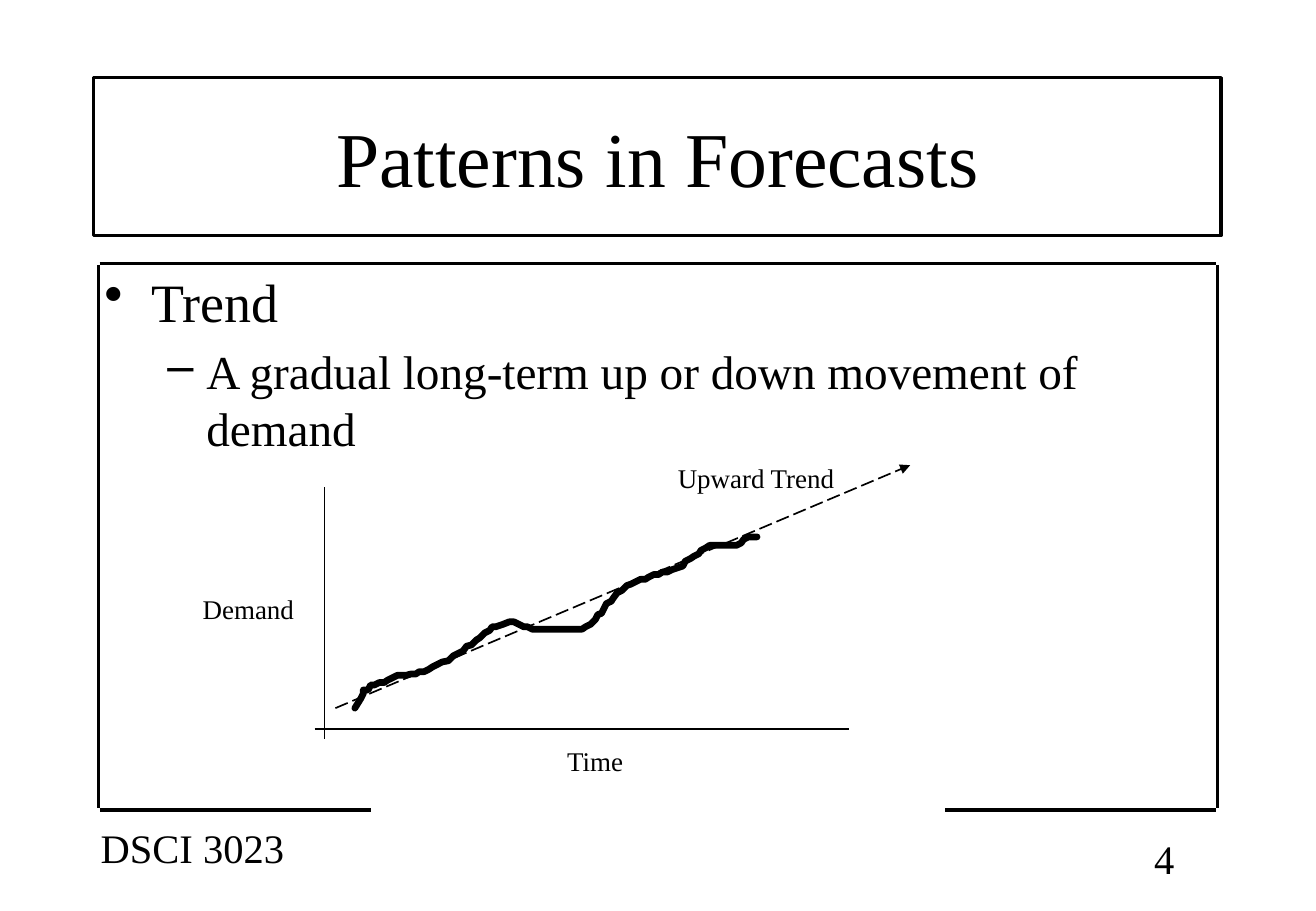
"""Build the slide on trend patterns in forecasts."""
from dataclasses import dataclass
from typing import Optional

from lxml.etree import SubElement
from pptx import Presentation
from pptx.dml.color import RGBColor
from pptx.enum.dml import MSO_LINE
from pptx.enum.shapes import MSO_CONNECTOR, MSO_SHAPE
from pptx.enum.text import MSO_ANCHOR, MSO_AUTO_SIZE, PP_ALIGN
from pptx.oxml.ns import qn
from pptx.util import Inches, Pt

COLUMNS, ROWS = 1083, 750
WIDTH, HEIGHT = Inches(10.83), Inches(7.5)
FONT = "Times New Roman"
BLACK = "000000"
LEFT, RIGHT, TOP, BOTTOM = 81, 1002, 217, 667


@dataclass(frozen=True)
class Rule:
    start: tuple[int, int]
    end: tuple[int, int]
    weight: float = 2
    dash: Optional[MSO_LINE] = None
    arrow: bool = False


@dataclass(frozen=True)
class Label:
    text: str
    area: tuple[int, int, int, int]
    size: int = 16


@dataclass(frozen=True)
class Bullet:
    text: str
    mark: str
    size: int
    margin: float
    hanging: float
    level: int = 0
    before: float = 0


RULES = [
    Rule((LEFT + 1, TOP), (RIGHT - 1, TOP)),
    Rule((LEFT, TOP + 1), (LEFT, BOTTOM - 2)),
    Rule((RIGHT, TOP + 1), (RIGHT, BOTTOM - 2)),
    Rule((LEFT + 1, BOTTOM), (305, BOTTOM)),
    Rule((778, BOTTOM), (RIGHT - 1, BOTTOM)),
    Rule((267, 401), (267, 608), 1),
    Rule((259, 600), (699, 600), 1),
    Rule((276, 583), (749, 383), 1, MSO_LINE.LONG_DASH, True),
]
LABELS = [
    Label("4", (940, 682, 59, 50), 24),
    Label("DSCI 3023", (73, 673, 171, 50), 24),
    Label("Demand", (157, 483, 95, 36)),
    Label("Time", (457, 608, 67, 36)),
    Label("Upward Trend", (548, 375, 150, 36)),
]
BULLETS = [
    Bullet("Trend", "•", 32, 0.39, 0.39),
    Bullet("A gradual long-term up or down movement of demand", "–", 28,
           0.84, 0.32, level=1, before=5.6),
]
DEMAND_CURVE = [
    (292, 583), (297, 575), (299, 571), (299, 568), (303, 568), (305, 564), (308, 564),
    (312, 562), (316, 562), (319, 560), (323, 558), (327, 556), (331, 556), (334, 556),
    (338, 555), (342, 555), (345, 553), (349, 553), (353, 551), (356, 549), (360, 547),
    (364, 545), (369, 544), (373, 540), (377, 538), (381, 536), (384, 532), (388, 531),
    (392, 527), (395, 525), (399, 521), (403, 519), (405, 516), (408, 516), (414, 514),
    (419, 512), (423, 512), (427, 514), (431, 516), (434, 516), (438, 518), (442, 518),
    (447, 518), (453, 518), (456, 518), (460, 518), (466, 518), (469, 518), (473, 518),
    (479, 518), (482, 516), (486, 514), (490, 510), (492, 506), (495, 505), (497, 501),
    (499, 497), (503, 495), (505, 492), (508, 488), (512, 486), (516, 482), (519, 481),
    (523, 479), (527, 477), (531, 477), (534, 475), (538, 473), (542, 473), (545, 471),
    (549, 471), (553, 469), (556, 468), (562, 466), (564, 462), (568, 460), (571, 458),
    (575, 456), (577, 453), (581, 451), (584, 449), (588, 449), (592, 449), (595, 449),
    (601, 449), (606, 449), (610, 447), (612, 444), (616, 442), (619, 442), (623, 442),
]


def color(value: str) -> RGBColor:
    return RGBColor.from_string(value)


def across(columns: float) -> int:
    return round(WIDTH * columns / COLUMNS)


def down(rows: float) -> int:
    return round(HEIGHT * rows / ROWS)


def place(left: float, top: float, width: float, height: float) -> tuple[int, int, int, int]:
    return across(left), down(top), across(width), down(height)


def write(para, text: str, *, size: float, fill: str = BLACK, align=PP_ALIGN.LEFT) -> None:
    para.alignment = align
    span = para.add_run()
    span.text = text
    span.font.name = FONT
    span.font.size = Pt(size)
    span.font.color.rgb = color(fill)


def stroke(line, weight: float) -> None:
    line.color.rgb = color(BLACK)
    line.width = Pt(weight)


def draw_rule(page, rule: Rule) -> None:
    (x1, y1), (x2, y2) = rule.start, rule.end
    connector = page.shapes.add_connector(
        MSO_CONNECTOR.STRAIGHT, across(x1), down(y1), across(x2), down(y2))
    stroke(connector.line, rule.weight)
    if rule.dash is not None:
        connector.line.dash_style = rule.dash
    properties = connector._element.spPr
    if rule.arrow:
        SubElement(properties.find(qn("a:ln")), qn("a:tailEnd"), type="triangle")
    SubElement(properties, qn("a:effectLst"))


def draw_label(page, label: Label) -> None:
    frame = page.shapes.add_textbox(*place(*label.area)).text_frame
    frame.word_wrap = False
    frame.auto_size = MSO_AUTO_SIZE.SHAPE_TO_FIT_TEXT
    write(frame.paragraphs[0], label.text, size=label.size)


def draw_title(page, text: str) -> None:
    box = page.shapes.add_shape(MSO_SHAPE.RECTANGLE, *place(77, 64, 928, 130))
    box.shadow.inherit = False
    box.fill.background()
    stroke(box.line, 2)
    box.text_frame.word_wrap = True
    box.text_frame.vertical_anchor = MSO_ANCHOR.MIDDLE
    write(box.text_frame.paragraphs[0], text, size=46, align=PP_ALIGN.CENTER)


def draw_bullets(page, bullets: list[Bullet]) -> None:
    frame = page.shapes.add_textbox(*place(76, 216, 931, 478)).text_frame
    frame.word_wrap = True
    for index, bullet in enumerate(bullets):
        para = frame.add_paragraph() if index else frame.paragraphs[0]
        para.level = bullet.level
        properties = para._p.get_or_add_pPr()
        properties.set("marL", str(Inches(bullet.margin)))
        properties.set("indent", str(-Inches(bullet.hanging)))
        SubElement(properties, qn("a:buChar"), char=bullet.mark)
        if bullet.before:
            para.space_before = Pt(bullet.before)
        write(para, bullet.text, size=bullet.size)


def draw_curve(page, points: list[tuple[int, int]]) -> None:
    builder = page.shapes.build_freeform(
        *points[0], scale=(WIDTH / COLUMNS, HEIGHT / ROWS))
    builder.add_line_segments(points[1:], close=False)
    curve = builder.convert_to_shape()
    curve.shadow.inherit = False
    curve.fill.background()
    stroke(curve.line, 4)
    outline = curve._element.spPr.find(qn("a:ln"))
    outline.set("cap", "rnd")
    SubElement(outline, qn("a:round"))


def main() -> None:
    deck = Presentation()
    deck.slide_width, deck.slide_height = WIDTH, HEIGHT
    page = deck.slides.add_slide(deck.slide_layouts[6])
    draw_title(page, "Patterns in Forecasts")
    draw_bullets(page, BULLETS)
    for rule in RULES:
        draw_rule(page, rule)
    draw_curve(page, DEMAND_CURVE)
    for label in LABELS:
        draw_label(page, label)
    deck.save("out.pptx")


if __name__ == "__main__":
    main()
